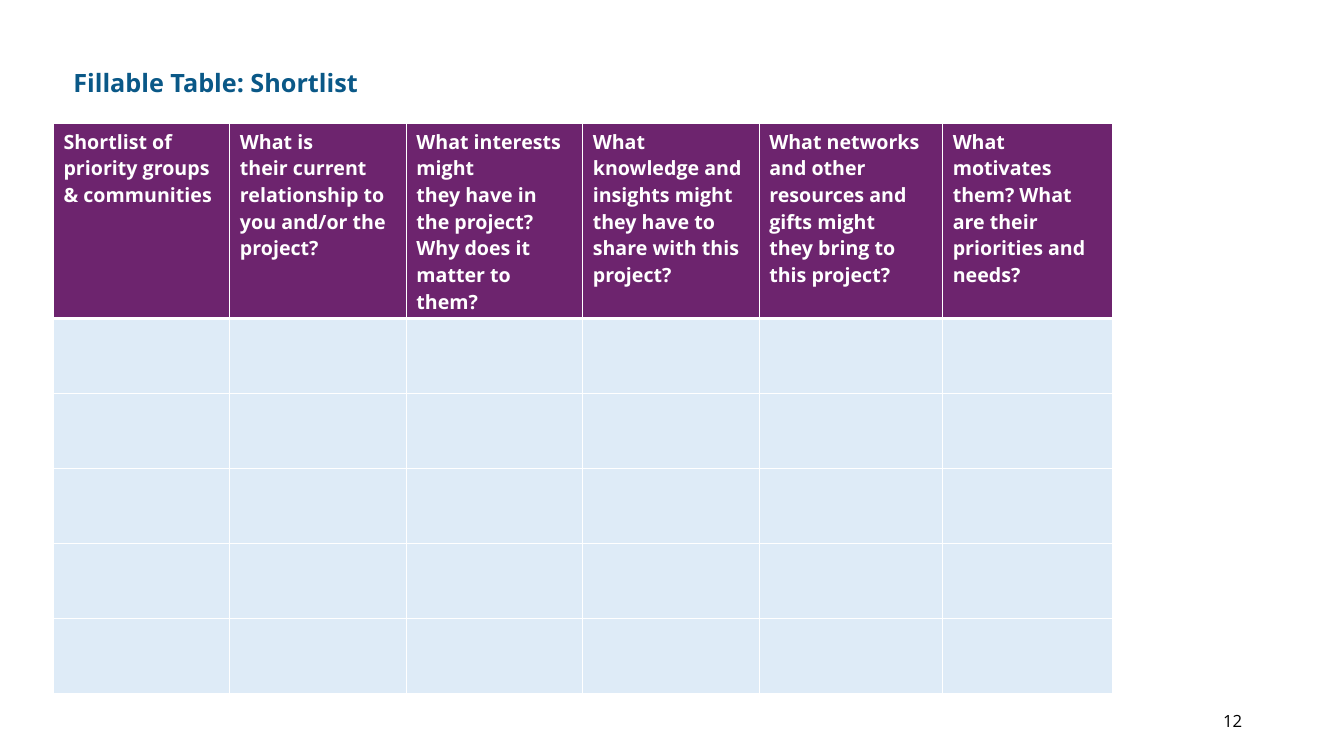
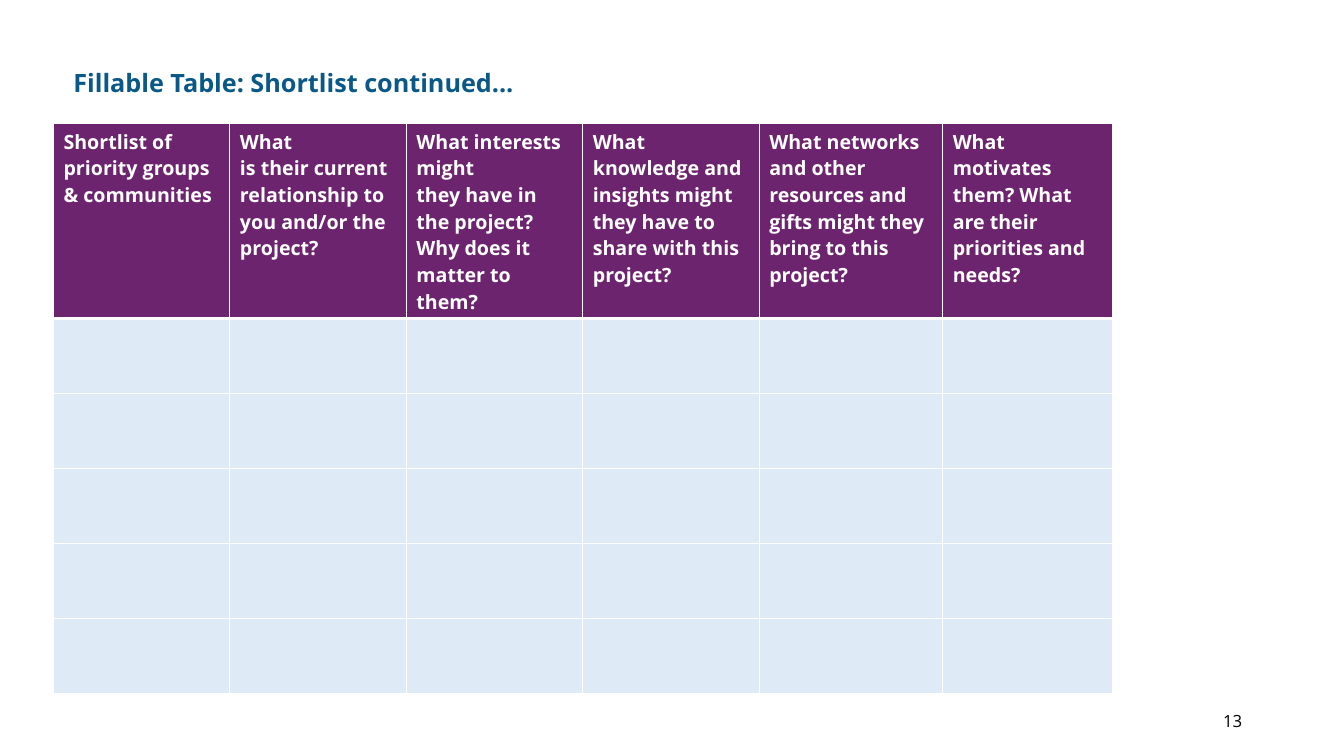
from dataclasses import dataclass

from lxml import etree
from pptx import Presentation
from pptx import util as u
from pptx.dml.color import RGBColor
from pptx.enum import text as t
from pptx.oxml import ns

NBSP = chr(160)
EMU_PER_PX = 9144
SLIDE_SIZE = 1333, 750
TABLE_LEFT, TABLE_TOP = 53, 122
COLUMN_WIDTHS = 175, 175, 175, 175, 182, 169
HEADER_HEIGHT, BODY_HEIGHT, BODY_ROWS = 194, 372, 5


@dataclass(frozen=True)
class Theme:
    """Colours, font and type sizes of the deck."""

    font: str = "Open Sans"
    heading: str = "0A5887"
    header_fill: str = "6D246E"
    body_fill: str = "DEEBF7"
    paper: str = "FFFFFF"
    ink: str = "000000"
    title_size: int = 18
    header_size: int = 14
    number_size: int = 12
    rule: int = 1
    header_rule: int = 3


def px(length):
    """Turn px into EMU."""
    return u.Emu(length * EMU_PER_PX)


def write(frame, wording, *, font, size, color, bold=False, align=t.PP_ALIGN.LEFT):
    """Put one formatted paragraph into a text frame, with ~ as a hard space."""
    paragraph = frame.paragraphs[0]
    paragraph.alignment = align
    run = paragraph.add_run()
    run.text = wording.replace("~", NBSP)
    run.font.name = font
    run.font.size = u.Pt(size)
    run.font.bold = bold
    run.font.color.rgb = RGBColor.from_string(color)


def rule_cell(cell, color, **widths):
    """Draw the borders of a cell, given as side=points."""
    properties = cell._tc.get_or_add_tcPr()
    for side, points in widths.items():
        border = etree.SubElement(properties, ns.qn(f"a:ln{side}"), w=str(u.Pt(points)))
        fill = etree.SubElement(border, ns.qn("a:solidFill"))
        etree.SubElement(fill, ns.qn("a:srgbClr"), val=color)


class Deck:
    """Builds slides in one style."""

    def __init__(self, theme):
        """Start an empty deck."""
        self.theme = theme
        self.presentation = Presentation()
        self.presentation.slide_width, self.presentation.slide_height = map(px, SLIDE_SIZE)
        self.slide = None

    def add_slide(self):
        """Open a new blank slide."""
        self.slide = self.presentation.slides.add_slide(self.presentation.slide_layouts[6])

    def label(self, wording, box, **style):
        """Add a line of text centred in the height of its box."""
        frame = self.slide.shapes.add_textbox(*map(px, box)).text_frame
        frame.word_wrap = True
        frame.vertical_anchor = t.MSO_ANCHOR.MIDDLE
        write(frame, wording, font=self.theme.font, **style)

    def title(self, wording):
        """Add the slide title."""
        self.label(wording, (63, 62, 810, 40), size=self.theme.title_size,
                   color=self.theme.heading, bold=True)

    def page_number(self, number):
        """Add the page number."""
        self.label(str(number), (942, 695, 300, 40), size=self.theme.number_size,
                   color=self.theme.ink, align=t.PP_ALIGN.RIGHT)

    def cell(self, cell, fill, top, bottom):
        """Fill and rule one table cell."""
        rule = self.theme.rule
        rule_cell(cell, self.theme.paper, L=rule, R=rule, T=top, B=bottom)
        cell.fill.solid()
        cell.fill.fore_color.rgb = RGBColor.from_string(fill)

    def fillable_table(self, questions):
        """Add a table of questions above empty rows."""
        theme = self.theme
        box = TABLE_LEFT, TABLE_TOP, sum(COLUMN_WIDTHS), HEADER_HEIGHT + BODY_HEIGHT
        table = self.slide.shapes.add_table(
            BODY_ROWS + 1, len(questions), *map(px, box)).table
        table.horz_banding = False
        for column, width in zip(table.columns, COLUMN_WIDTHS):
            column.width = px(width)
        header, *body = table.rows
        header.height = px(HEADER_HEIGHT)
        for cell, question in zip(header.cells, questions):
            self.cell(cell, theme.header_fill, theme.rule, theme.header_rule)
            write(cell.text_frame, question, font=theme.font, size=theme.header_size,
                  color=theme.paper, bold=True)
        for index, row in enumerate(body):
            row.height = px(BODY_HEIGHT) // BODY_ROWS
            for cell in row.cells:
                self.cell(cell, theme.body_fill,
                          theme.rule if index else theme.header_rule, theme.rule)


def shortlist_questions(relationship, networks):
    """Return the header row with the wording that varies in its line breaks."""
    return (
        "Shortlist~of priority groups & communities",
        f"{relationship} relationship to you and/or the project?",
        "What interests might they~have in the project? Why does it matter to them?",
        "What knowledge and insights might they~have to share with this project?",
        f"What networks and other resources and gifts {networks} to this project?",
        "What motivates them? What are their priorities and needs?",
    )


def main():
    """Build and save the deck."""
    deck = Deck(Theme())
    pages = (
        (12, "Fillable Table: Shortlist", "What is their~current", "might they~bring"),
        (13, "Fillable Table: Shortlist continued...", "What is~their~current",
         "might~they bring"),
    )
    for number, heading, relationship, networks in pages:
        deck.add_slide()
        deck.title(heading)
        deck.fillable_table(shortlist_questions(relationship, networks))
        deck.page_number(number)
    deck.presentation.save("out.pptx")


if __name__ == "__main__":
    main()
